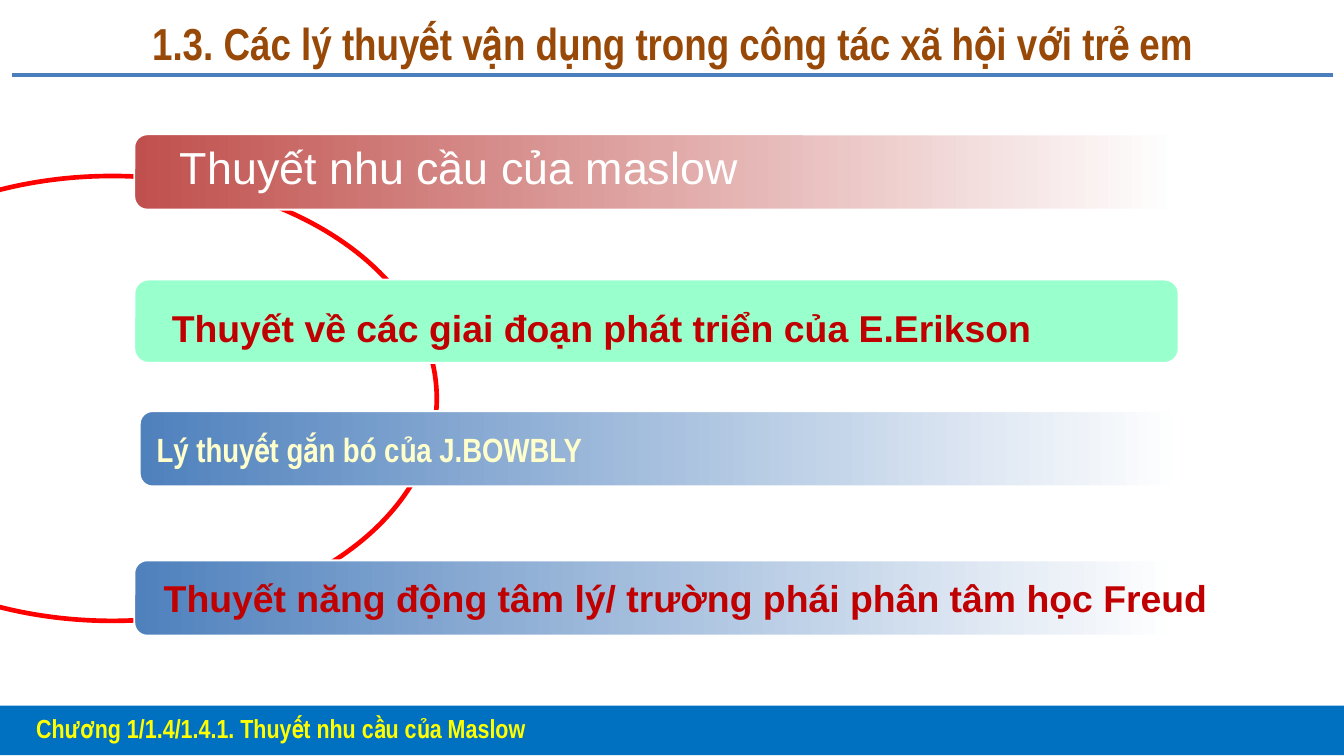
import pptx
import pptx.util
import pptx.dml.color
import pptx.enum.shapes
import pptx.enum.text
from lxml import etree

Inches, Pt = pptx.util.Inches, pptx.util.Pt
SHAPE = pptx.enum.shapes.MSO_SHAPE
ALIGN = pptx.enum.text.PP_ALIGN
ANCHOR = pptx.enum.text.MSO_ANCHOR


def color(value):
    return pptx.dml.color.RGBColor.from_string(value)


def write(sp, text, size, font, hue, bold=True, align=ALIGN.LEFT, anchor=ANCHOR.TOP):
    tf = sp.text_frame
    tf.word_wrap = True
    tf.vertical_anchor = anchor
    p = tf.paragraphs[0]
    p.text = text
    p.alignment = align
    p.font.size = Pt(size)
    p.font.name = font
    p.font.bold = bold
    p.font.color.rgb = color(hue)


prs = pptx.Presentation()
prs.slide_width = Inches(10)
prs.slide_height = Inches(10 * 9 / 16)
s = prs.slides.add_slide(prs.slide_layouts[6])

footer = s.shapes.add_shape(SHAPE.RECTANGLE, Inches(-0.04), Inches(5.25), Inches(10.08), Inches(0.37))
footer.shadow.inherit = False
footer.fill.solid()
footer.fill.fore_color.rgb = color("0070C0")
footer.line.fill.background()

rule = s.shapes.add_connector(
    pptx.enum.shapes.MSO_CONNECTOR.STRAIGHT, Inches(0.09), Inches(0.56), Inches(9.92), Inches(0.56))
rule.line.color.rgb = color("4B7EBC")
rule.line.width = Pt(2)
etree.SubElement(rule._element.spPr, pptx.oxml.ns.qn("a:effectLst"))

title = s.shapes.add_textbox(Inches(0.17), Inches(0.06), Inches(9.67), Inches(0.51))
write(title, "1.3. Các lý thuyết vận dụng trong công tác xã hội với trẻ em",
      24, "Arial Narrow", "984807", align=ALIGN.CENTER, anchor=ANCHOR.MIDDLE)

chapter = s.shapes.add_textbox(Inches(0.17), Inches(5.25), Inches(9.56), Inches(0.32))
write(chapter, "Chương 1/1.4/1.4.1. Thuyết nhu cầu của Maslow",
      14, "Arial Narrow", "FFFF00", align=ALIGN.JUSTIFY)

arc = s.shapes.add_shape(SHAPE.OVAL, Inches(-1.58), Inches(1.31), Inches(4.83), Inches(3.31))
arc.shadow.inherit = False
arc.fill.background()
arc.line.color.rgb = color("FF0000")
arc.line.width = Pt(2.5)

bars = []
for left, top, height, hue, fades in [
    (1, 1, 0.56, "C0504D", True),
    (1, 2.08, 0.62, "99FFCC", False),
    (1, 4.17, 0.56, "4F81BD", True),
    (1.04, 3.06, 0.56, "4F81BD", True),
]:
    sp = s.shapes.add_shape(SHAPE.ROUNDED_RECTANGLE, Inches(left), Inches(top), Inches(7.77), Inches(height))
    sp.shadow.inherit = False
    sp.adjustments[0] = 0.17
    if fades:
        sp.fill.gradient()
        sp.fill.gradient_angle = 0
        for stop, stop_hue in zip(sp.fill.gradient_stops, (hue, "FFFFFF")):
            stop.color.rgb = color(stop_hue)
    else:
        sp.fill.solid()
        sp.fill.fore_color.rgb = color(hue)
    sp.line.color.rgb = color("FFFFFF")
    sp.line.width = Pt(1)
    bars.append(sp)

for left, top, width, height, text, size, hue, bold in [
    (1.24, 0.99, 7.51, 0.5, "Thuyết nhu cầu của maslow", 24, "FFFFFF", False),
    (1.18, 2.22, 7.14, 0.44, "Thuyết về các giai đoạn phát triển của E.Erikson", 20, "C00000", True),
    (1.12, 4.23, 8, 0.44, "Thuyết năng động tâm lý/ trường phái phân tâm học Freud", 20, "C00000", True),
]:
    sp = s.shapes.add_textbox(Inches(left), Inches(top), Inches(width), Inches(height))
    write(sp, text, size, "Arial", hue, bold)

write(bars[-1], "Lý thuyết gắn bó của J.BOWBLY", 18, "Arial Narrow", "FFFFCC", anchor=ANCHOR.MIDDLE)

prs.save("out.pptx")
